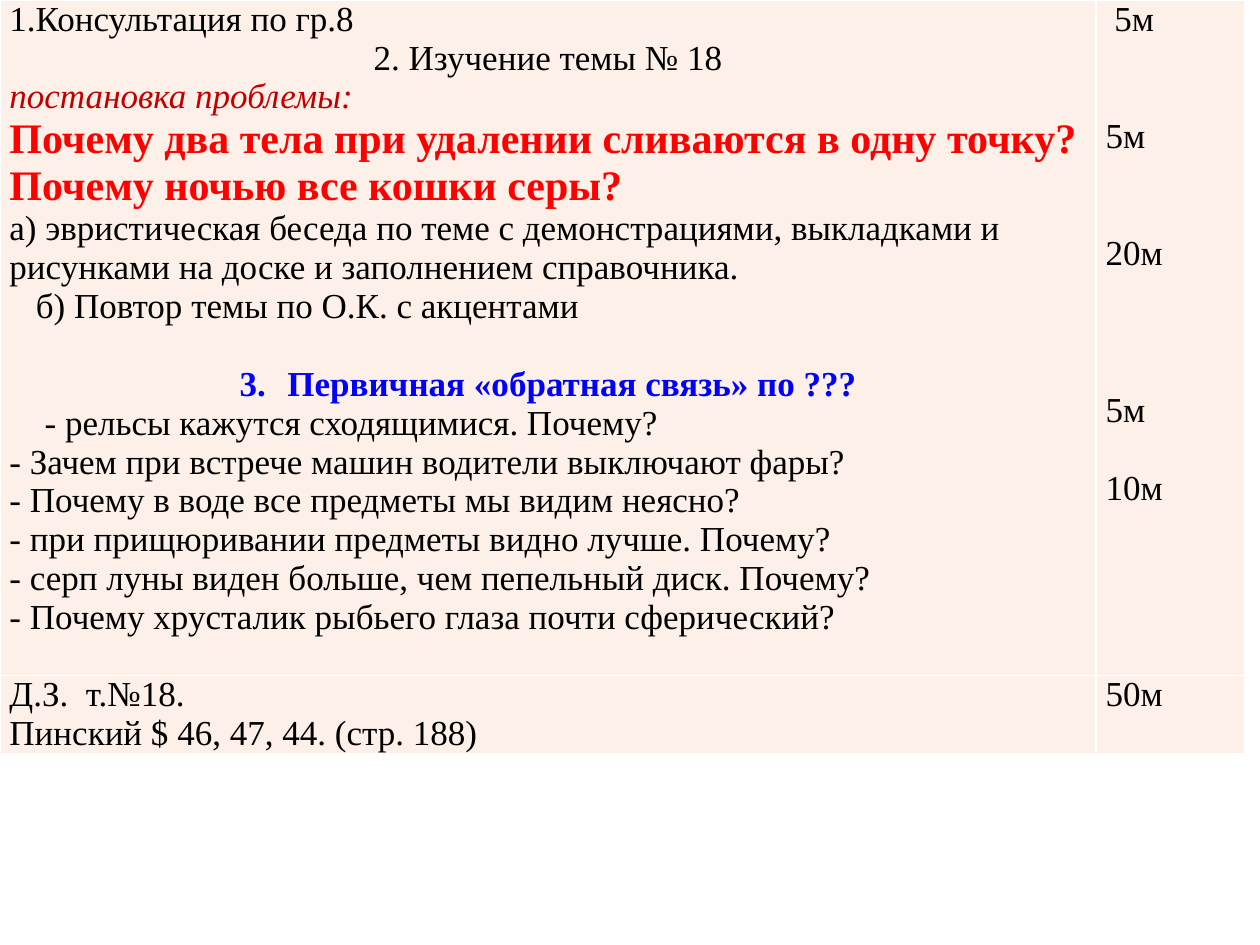
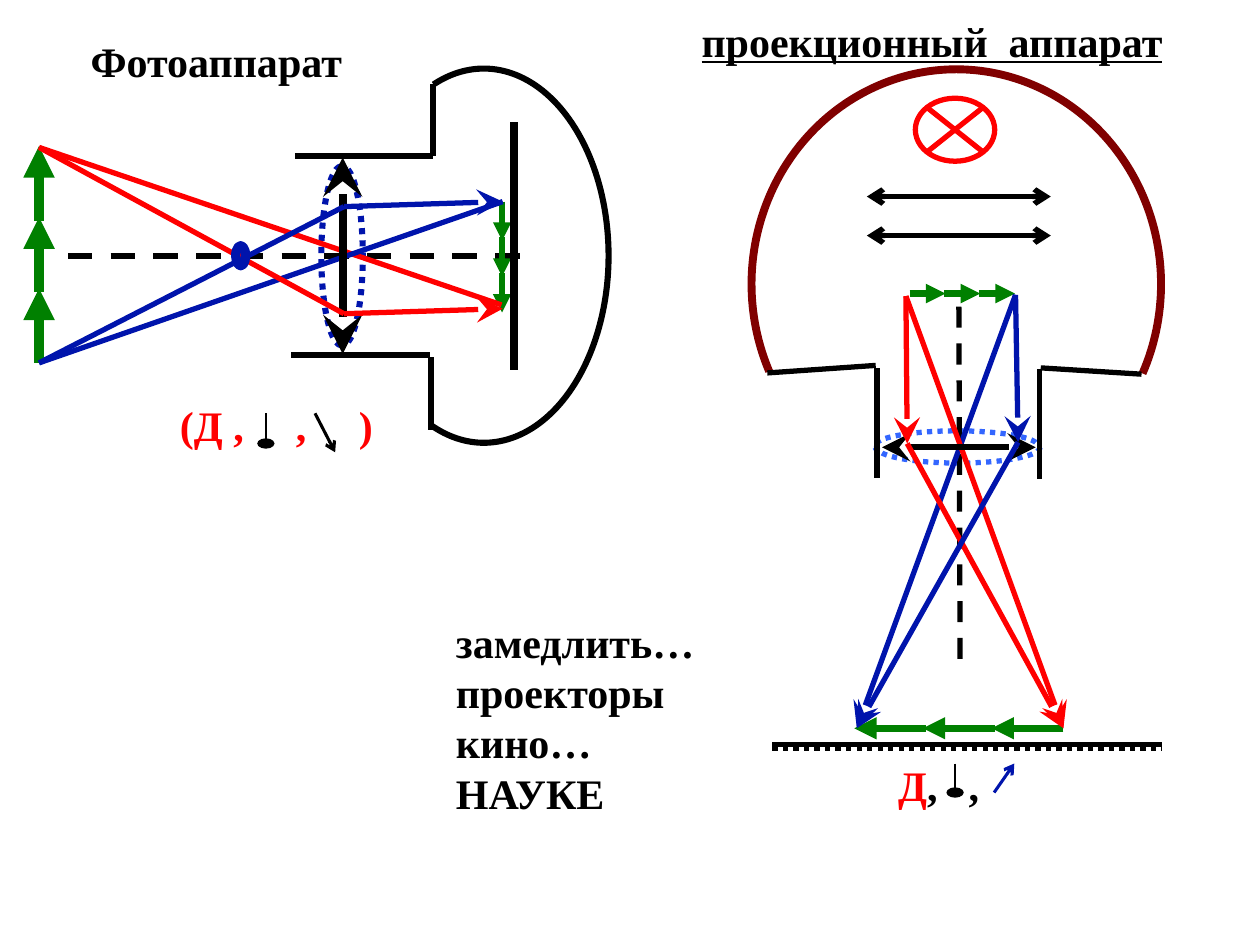
from dataclasses import dataclass
from math import atan2, degrees

from lxml import etree
from pptx import Presentation
from pptx.dml.color import RGBColor
from pptx.enum.dml import MSO_LINE
from pptx.enum.shapes import MSO_CONNECTOR, MSO_SHAPE
from pptx.enum.text import PP_ALIGN
from pptx.oxml.ns import qn
from pptx.util import Emu, Inches, Pt

CENTER = PP_ALIGN.CENTER
STRAIGHT = MSO_CONNECTOR.STRAIGHT
ARC, OVAL = MSO_SHAPE.ARC, MSO_SHAPE.OVAL
LAMP = MSO_SHAPE.FLOWCHART_SUMMING_JUNCTION
DASH, DOT = MSO_LINE.DASH, MSO_LINE.ROUND_DOT


@dataclass(frozen=True)
class Theme:
    font: str = "Times New Roman"
    body: int = 20
    large: int = 24
    line_height: float = 1.12
    black: str = "000000"
    white: str = "FFFFFF"
    red: str = "FF0000"
    crimson: str = "C00000"
    maroon: str = "800000"
    blue: str = "0014AC"
    bright_blue: str = "0000FF"
    sky: str = "3366FF"
    green: str = "008000"
    cell: str = "FCF0E8"


THEME = Theme()
WIDTH, HEIGHT = Inches(10), Inches(7.5)
UNIT = WIDTH // 100  # the slide is a grid of 100 columns by 75 rows
BLANK_LINE = THEME.body * THEME.line_height


def grid(count):
    return Emu(round(count * UNIT))


# ---- Text ----
def add_span(para, text, color=THEME.black, size=THEME.large, bold=True, italic=False, underline=False):
    span = para.add_run()
    span.text = text
    font = span.font
    font.name, font.size = THEME.font, Pt(size)
    font.bold, font.italic, font.underline = bold, italic, underline
    font.color.rgb = RGBColor.from_string(color)


def next_para(frame, index):
    return frame.paragraphs[0] if index == 0 else frame.add_paragraph()


def set_indent(para, left, first=0):
    properties = para._p.get_or_add_pPr()
    properties.set("marL", str(Inches(left)))
    properties.set("indent", str(Inches(first)))
    return properties


def set_tabs(para, stops):
    tabs = etree.SubElement(para._p.get_or_add_pPr(), qn("a:tabLst"))
    for stop in stops:
        etree.SubElement(tabs, qn("a:tab"), pos=str(Inches(stop)), algn="l")


# ---- Lines ----
def style_line(line, color, width, dash=None):
    line.color.rgb = RGBColor.from_string(color)
    line.width = Pt(width)
    if dash:
        line.dash_style = dash


def add_arrowhead(connector, end, kind):
    across = "lg" if kind in ("stealth", "oval") else "med"
    along = "lg" if kind == "stealth" else "med"
    etree.SubElement(connector.line._get_or_add_ln(), qn(f"a:{end}"), type=kind, w=across, len=along)


@dataclass
class Panel:
    """Drawing area whose points are grid units from its top left corner."""
    page: object
    left: float
    top: float

    def spot(self, x, y):
        return grid(self.left + x), grid(self.top + y)

    def line(self, start, end, color=THEME.black, width=3, dash=None, head=None, tail=None):
        connector = self.page.shapes.add_connector(STRAIGHT, *self.spot(*start), *self.spot(*end))
        style_line(connector.line, color, width, dash)
        for name, kind in (("headEnd", head), ("tailEnd", tail)):
            if kind:
                add_arrowhead(connector, name, kind)
        etree.SubElement(connector._element.spPr, qn("a:effectLst"))

    def chain(self, start, step, length, color, width):
        """Three arrows in a row; step and length are (x, y) offsets."""
        for index in range(3):
            x, y = start[0] + index * step[0], start[1] + index * step[1]
            self.line((x, y), (x + length[0], y + length[1]), color, width, tail="triangle")

    def shape(self, kind, x, y, width, height, color, weight, fill=None, dash=None):
        form = self.page.shapes.add_shape(kind, *self.spot(x, y), grid(width), grid(height))
        form.shadow.inherit = False
        if fill:
            form.fill.solid()
            form.fill.fore_color.rgb = RGBColor.from_string(fill)
        else:
            form.fill.background()
        style_line(form.line, color, weight, dash)
        return form

    def arc(self, center, radii, start, end, color, weight, dash=None):
        """Elliptical arc, clockwise; start and end are offsets from the centre."""
        (x, y), (across, down) = center, radii
        curve = self.shape(ARC, x - across, y - down, 2 * across, 2 * down, color, weight, dash=dash)
        for index, (dx, dy) in enumerate((start, end)):
            # adjustments count 60000ths of a degree in units of 100000
            curve.adjustments[index] = degrees(atan2(dy, dx)) % 360 * 0.6

    def text(self, x, y, width, height, paragraphs, tabs=(), **style):
        """Each paragraph is a list of (text, colour) spans."""
        box = self.page.shapes.add_textbox(*self.spot(x, y), grid(width), grid(height))
        frame = box.text_frame
        frame.word_wrap = True
        for index, spans in enumerate(paragraphs):
            para = next_para(frame, index)
            if tabs:
                set_tabs(para, tabs)
            for words, color in spans:
                add_span(para, words, color, **style)


# ---- Lesson plan ----
PROBLEM = dict(color=THEME.red, size=THEME.large, bold=True)
# Each entry: text, span style, paragraph layout
PLAN = [
    ("1.Консультация по гр.8", {}, {}),
    ("2. Изучение темы № 18", {}, dict(center=True)),
    ("постановка проблемы:", dict(color=THEME.crimson, italic=True), {}),
    ("Почему два тела при удалении сливаются в одну точку?", PROBLEM, {}),
    ("Почему ночью все кошки серы?", PROBLEM, {}),
    ("а) эвристическая беседа по теме с демонстрациями, выкладками и "
     "рисунками на доске и заполнением справочника.", {}, {}),
    ("б) Повтор темы по О.К. с акцентами", {}, dict(indent=0.21)),
    ("Первичная «обратная связь» по ???", dict(color=THEME.bright_blue, bold=True),
     dict(center=True, skip=1, number=3)),
    ("- рельсы кажутся сходящимися. Почему?", {}, dict(indent=0.28)),
    ("- Зачем при встрече машин водители выключают фары?", {}, {}),
    ("- Почему в воде все предметы мы видим неясно?", {}, {}),
    ("- при прищюривании предметы видно лучше. Почему?", {}, {}),
    ("- серп луны виден больше, чем пепельный диск. Почему?", {}, {}),
    ("- Почему хрусталик рыбьего глаза почти сферический?", {}, {}),
]
TIMES = [
    ("5м", {}, dict(indent=0.07)),
    ("5м", {}, dict(skip=2)),
    ("20м", {}, dict(skip=2)),
    ("5м", {}, dict(skip=3)),
    ("10м", {}, dict(skip=1)),
]
HOMEWORK = [("Д.З.  т.№18.", {}, {}), ("Пинский $ 46, 47, 44. (стр. 188)", {}, {})]
TOTAL = [("50м", {}, {})]


def fill_cell(cell, entries):
    cell.margin_left = cell.margin_right = Pt(5.4)
    cell.margin_top = cell.margin_bottom = 0
    properties = cell._tc.get_or_add_tcPr()
    for side in ("lnL", "lnR", "lnT", "lnB"):
        border = etree.SubElement(properties, qn(f"a:{side}"), w=str(Pt(1)))
        paint = etree.SubElement(border, qn("a:solidFill"))
        etree.SubElement(paint, qn("a:srgbClr"), val=THEME.white)
    cell.fill.solid()
    cell.fill.fore_color.rgb = RGBColor.from_string(THEME.cell)
    for index, (text, style, layout) in enumerate(entries):
        para = next_para(cell.text_frame, index)
        if layout.get("center"):
            para.alignment = CENTER
        if "skip" in layout:
            para.space_before = Pt(layout["skip"] * BLANK_LINE)
        if "indent" in layout:
            set_indent(para, layout["indent"])
        if "number" in layout:
            etree.SubElement(set_indent(para, 0.38, -0.38), qn("a:buAutoNum"),
                             type="arabicPeriod", startAt=str(layout["number"]))
        add_span(para, text, **{"size": THEME.body, "bold": False, **style})


def add_lesson_plan(page, left, top, columns, rows):
    table = page.shapes.add_table(len(rows), len(columns), grid(left), grid(top),
                                  grid(sum(columns)), grid(sum(rows))).table
    table.first_row = table.horz_banding = False
    for column, width in zip(table.columns, columns):
        column.width = grid(width)
    for row, height in zip(table.rows, rows):
        row.height = grid(height)
    for cell, entries in zip(table.iter_cells(), (PLAN, TIMES, HOMEWORK, TOTAL)):
        fill_cell(cell, entries)


# ---- Camera ----
def draw_camera(panel):
    black, red, blue, green = THEME.black, THEME.red, THEME.blue, THEME.green
    axis, lens = 18.3, 25.2
    object_top, object_base = (1.1, 9.7), (1.1, 26.8)
    panel.text(4.2, 0.3, 25.8, 5, [[("Фотоаппарат", black)]])

    # Lens outline, optical axis, object and image
    panel.arc((lens, axis), (1.6, 7.1), (-0.4, -6.8), (0, 7.1), blue, 3.5, DOT)
    panel.arc((lens - 0.1, axis), (1.6, 7.1), (0, 7.1), (0.4, -6.8), blue, 3.5, DOT)
    panel.line((3.4, axis), (39.5, axis), black, 3.5, DASH)
    panel.chain(object_base, (0, -5.65), (0, -5.9), green, 6)
    panel.chain((37.85, 14), (0, 2.85), (0, 3.1), green, 3.5)

    # Rays through the lens centre
    panel.line(object_top, (37.8, 22.2), red)
    panel.line(object_base, (37.9, 14), blue)

    # Housing and film
    for start, end in (((21.4, 10.4), (32.4, 10.4)), ((21.1, 26.2), (32.1, 26.2)),
                       ((32.4, 10.4), (32.4, 4.7)), ((32.2, 32.1), (32.2, 26.3))):
        panel.line(start, end, black, 3.5)
    panel.arc((36.4, axis), (9.9, 14.85), (-4, -13.6), (-4.2, 13.5), black, 3.5)
    panel.line((38.8, 7.7), (38.8, 27.4), black, 4.25)

    # Lens and rays through the focus
    panel.line((lens, 10.5), (lens, 26.1), black, 4.5, head="stealth", tail="stealth")
    for start, bend, end, color in ((object_top, (25.3, 22.9), (37.9, 22.5), red),
                                    (object_base, (25.3, 14.4), (37.9, 14), blue)):
        panel.line(start, bend, color)
        panel.line(bend, end, color, tail="stealth")
    panel.shape(OVAL, 16.7, 17.5, 0.8, 1.6, blue, 5.25, red)

    # Image properties
    panel.text(11.3, 29.2, 18.8, 9.1, [[("(Д ,\t,\t)", red)]], tabs=(0.92, 1.42))
    panel.line((19.1, 30.8), (19.1, 33.2), black, 0.79, tail="oval")
    panel.line((23, 30.8), (24.6, 33.9), black, 1.75, tail="arrow")


# ---- Projector ----
def draw_projector(panel):
    black, red, blue, green = THEME.black, THEME.red, THEME.blue, THEME.green
    film_left, film_right = (17.9, 23.5), (26.6, 23.4)
    lens_left, lens_right = (18, 35.2), (26.8, 35.1)
    screen_left, screen_right = (14, 57.8), (30.4, 57.8)
    panel.text(0.7, 0.75, 41.4, 5, [[("проекционный  аппарат", black)]], underline=True)

    # Dome, lens outline, film and axis
    panel.arc((21.9, 22.55), (16.25, 17.05), (-14.8, 6.9), (14.8, 7.1), THEME.maroon, 4.5)
    panel.arc((21.9, 35.4), (6.5, 1.2), (-6.2, 0.4), (6.5, 0), THEME.sky, 3, DOT)
    panel.arc((22.05, 35.5), (6.5, 1.25), (6.5, 0), (-6.2, -0.4), THEME.sky, 3, DOT)
    panel.chain((18.2, 23.3), (2.75, 0), (2.85, 0), green, 3.75)
    panel.line((22.2, 52.3), (22.1, 23.7), black, 3, DASH)

    # Rays through the lens centre
    panel.line(screen_left, film_right, blue, head="stealth")
    panel.line(screen_right, film_left, red, head="stealth")

    # Housing, lamp and condenser
    for start, end in (((15.6, 37.9), (15.6, 29.2)), ((28.5, 38), (28.5, 29.3)),
                       ((15.5, 29), (6.9, 29.6)), ((36.6, 29.7), (28.6, 29.2))):
        panel.line(start, end)
    panel.shape(LAMP, 18.65, 7.8, 6.3, 5, red, 3, THEME.white)
    for row in (15.6, 18.7):
        panel.line((14.8, row), (29.4, row), head="arrow", tail="arrow")

    # Screen and image
    panel.chain(screen_right, (-5.45, 0), (-5.7, 0), green, 4.25)
    for row, dash in ((59.1, None), (59.4, DOT)):
        panel.line((7.3, row), (38.2, row), dash=dash)

    # Lens and rays through the focus
    panel.line((28.2, 35.5), (16, 35.5), black, 3.25, head="stealth", tail="stealth")
    for film, lens, screen, color in ((film_left, lens_left, screen_right, red),
                                      (film_right, lens_right, screen_left, blue)):
        panel.line(lens, film, color, head="stealth")
        panel.line(screen, lens, color, head="stealth")

    # Image properties
    panel.text(16.3, 59.8, 14.8, 5, [[("Д", red), (",\t,", black)]], tabs=(0.56,))
    panel.line((24.9, 62.9), (26.5, 60.6), blue, 1.75, tail="arrow")
    panel.line((21.8, 60.6), (21.8, 62.9), black, 0.79, tail="oval")


def add_uses(panel):
    words = ("замедлить…", "проекторы", "кино…", "НАУКЕ")
    panel.text(0, 0, 24.2, 21.2, [[(word, THEME.black)] for word in words])


def main():
    deck = Presentation()
    deck.slide_width, deck.slide_height = WIDTH, HEIGHT
    blank = deck.slide_layouts[6]
    add_lesson_plan(deck.slides.add_slide(blank), 0, 0, columns=(87, 11.8), rows=(53.6, 6.2))
    optics = deck.slides.add_slide(blank)
    draw_camera(Panel(optics, 2, 2))
    draw_projector(Panel(optics, 54, 0))
    add_uses(Panel(optics, 35.2, 48.4))
    deck.save("out.pptx")


if __name__ == "__main__":
    main()
